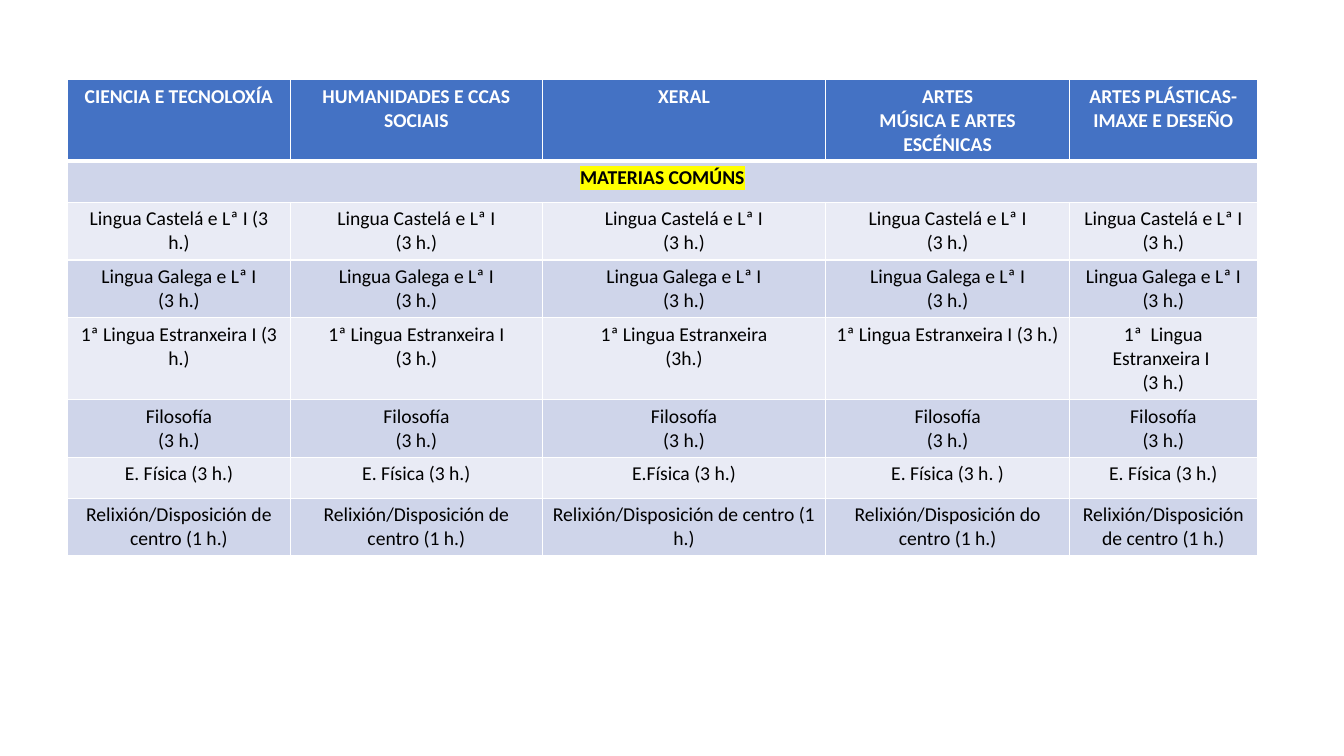
from pptx import Presentation
from pptx import util as u
from pptx.dml import color
from pptx.enum import text
from pptx.oxml import ns
from lxml import etree

COLORS = {"header": "4472C4", "odd": "CFD5EA", "even": "E9EBF5",
          "white": "FFFFFF", "black": "000000", "mark": "FFFF00"}
COLUMNS = [16.58, 18.75, 21.08, 18.15, 13.95]
HEADERS = ["CIENCIA E TECNOLOXÍA", "HUMANIDADES E CCAS SOCIAIS", "XERAL",
           "ARTES\nMÚSICA E ARTES ESCÉNICAS", "ARTES PLÁSTICAS-IMAXE E DESEÑO"]
CASTELA = "Lingua Castelá e Lª I"
GALEGA = "Lingua Galega e Lª I"
ESTRANXEIRA = "1ª Lingua Estranxeira"
FISICA = "E. Física (3 h.)"
RELIXION = "Relixión/Disposición de centro (1 h.)"
SUBJECTS = [
    [f"{CASTELA} (3 h.)"] + [f"{CASTELA}\n(3 h.)"] * 3 + [f"{CASTELA} (3 h.)"],
    [f"{GALEGA}\n(3 h.)"] * 4 + [f"{GALEGA} (3 h.)"],
    [f"{ESTRANXEIRA} I (3 h.)", f"{ESTRANXEIRA} I\n(3 h.)", f"{ESTRANXEIRA}\n(3h.)",
     f"{ESTRANXEIRA} I (3 h.)", "1ª  Lingua Estranxeira I \n(3 h.)"],
    ["Filosofía\n(3 h.)"] * 5,
    [FISICA, FISICA, "E.Física (3 h.)", "E. Física (3 h. )", FISICA],
    [RELIXION] * 3 + ["Relixión/Disposición do centro (1 h.)", RELIXION],
]


class Timetable:
    """Slide with a subject table, measured in percent of the slide's size."""

    def __init__(self, deck):
        self.deck = deck
        self.page = deck.slides.add_slide(deck.slide_layouts[6])
        self.font, self.size = "Calibri", u.Pt(14)

    def across(self, share):
        return round(self.deck.slide_width * share / 100)

    def down(self, share):
        return round(self.deck.slide_height * share / 100)

    def table(self, left, top, columns, row, count):
        frame = self.page.shapes.add_table(
            count, len(columns), self.across(left), self.down(top),
            self.across(sum(columns)), self.down(row * count))
        for column, share in zip(frame.table.columns, columns):
            column.width = self.across(share)
        for line in frame.table.rows:
            line.height = self.down(row)
        return frame.table

    def border(self, cell, bottom):
        properties = cell._tc.get_or_add_tcPr()
        for side, width in zip("LRTB", (1, 1, 1, bottom)):
            line = etree.SubElement(properties, ns.qn(f"a:ln{side}"), w=str(u.Pt(width)))
            fill = etree.SubElement(line, ns.qn("a:solidFill"))
            etree.SubElement(fill, ns.qn("a:srgbClr"), val=COLORS["white"])

    def cell(self, cell, words, fill, ink="black", bold=False, bottom=1):
        self.border(cell, bottom)
        cell.fill.solid()
        cell.fill.fore_color.rgb = color.RGBColor.from_string(COLORS[fill])
        cell.text = words
        for para in cell.text_frame.paragraphs:
            para.alignment = text.PP_ALIGN.CENTER
            para.font.name, para.font.size, para.font.bold = self.font, self.size, bold
            para.font.color.rgb = color.RGBColor.from_string(COLORS[ink])

    def highlight(self, span):
        mark = etree.SubElement(span.font._element, ns.qn("a:highlight"))
        etree.SubElement(mark, ns.qn("a:srgbClr"), val=COLORS["mark"])


def main():
    deck = Presentation()
    deck.slide_width, deck.slide_height = u.Inches(13.33), u.Inches(7.5)
    page = Timetable(deck)
    table = page.table(5.03, 10.53, COLUMNS, 5.41, len(SUBJECTS) + 2)
    for column, words in enumerate(HEADERS):
        page.cell(table.cell(0, column), words, "header", "white", bold=True, bottom=3)
    common = table.cell(1, 0)
    common.merge(table.cell(1, len(COLUMNS) - 1))
    page.cell(common, "MATERIAS COMÚNS", "odd", bold=True)
    page.highlight(common.text_frame.paragraphs[0].runs[0])
    for row, subjects in enumerate(SUBJECTS, 2):
        for column, words in enumerate(subjects):
            page.cell(table.cell(row, column), words, "odd" if row % 2 else "even")
    deck.save("out.pptx")


if __name__ == "__main__":
    main()
